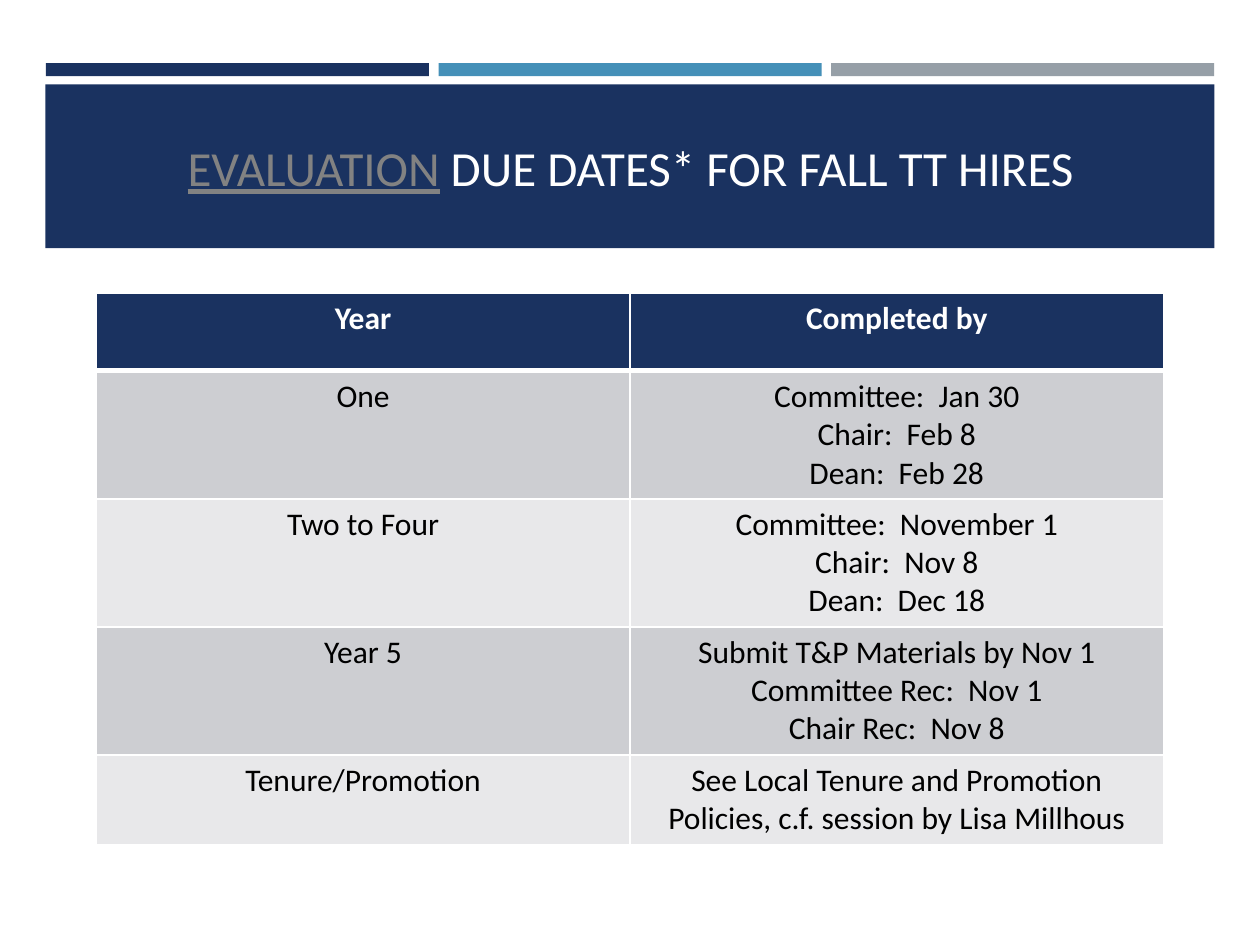
from lxml import etree
from pptx import Presentation
from pptx.dml.color import RGBColor
from pptx.enum.shapes import MSO_SHAPE
from pptx.enum.text import MSO_ANCHOR, PP_ALIGN
from pptx.oxml.ns import qn
from pptx.util import Pt

RECT = MSO_SHAPE.RECTANGLE
CENTER = PP_ALIGN.CENTER
MIDDLE = MSO_ANCHOR.MIDDLE

NAVY = RGBColor(0x1A, 0x32, 0x60)
BLUE = RGBColor(0x45, 0x90, 0xB8)
GRAY = RGBColor(0x96, 0x9F, 0xA7)
LINK_GRAY = RGBColor(0x82, 0x82, 0x82)
DARK_ROW = RGBColor(0xCD, 0xCE, 0xD2)
LIGHT_ROW = RGBColor(0xE8, 0xE8, 0xEA)
WHITE = RGBColor(0xFF, 0xFF, 0xFF)
BLACK = RGBColor(0, 0, 0)

ROWS = [
    ("Year", ["Completed by"]),
    ("One", ["Committee:  Jan 30", "Chair:  Feb 8", "Dean:  Feb 28"]),
    ("Two to Four", ["Committee:  November 1", "Chair:  Nov 8", "Dean:  Dec 18"]),
    ("Year 5", ["Submit T&P Materials by Nov 1", "Committee Rec:  Nov 1",
                "Chair Rec:  Nov 8"]),
    ("Tenure/Promotion", ["See Local Tenure and Promotion Policies, "
                          "c.f. session by Lisa Millhous"]),
]


def add_text(p, text, size=18, color=BLACK, bold=False, underline=False):
    p.alignment = CENTER
    r = p.add_run()
    r.text = text
    r.font.name = "Calibri"
    r.font.size = Pt(size)
    r.font.color.rgb = color
    r.font.bold = bold
    r.font.underline = underline


def set_borders(cell, **widths):
    """Draw white cell borders; widths maps the sides L, R, T, B to points."""
    tc_pr = cell._tc.get_or_add_tcPr()
    for side, width in widths.items():
        ln = etree.SubElement(tc_pr, qn(f"a:ln{side}"), w=str(Pt(width)))
        fill = etree.SubElement(ln, qn("a:solidFill"))
        etree.SubElement(fill, qn("a:srgbClr"), val=str(WHITE))


prs = Presentation()
prs.slide_width, prs.slide_height = Pt(720), Pt(540)
s = prs.slides.add_slide(prs.slide_layouts[5])

# Three accent bars above the title band
bars = [(26.3 + i * 224.3, 36, 218.9, 7.5, color)
        for i, color in enumerate((NAVY, BLUE, GRAY))]
for left, top, width, height, color in bars + [(26, 48.3, 668, 93.5, NAVY)]:
    sp = s.shapes.add_shape(RECT, Pt(left), Pt(top), Pt(width), Pt(height))
    sp.shadow.inherit = False
    sp.fill.solid()
    sp.fill.fore_color.rgb = color
    sp.line.fill.background()

# Title, brought in front of the band
title = s.shapes.title
title.element.getparent().append(title.element)
title.left, title.top, title.width, title.height = Pt(34.5), Pt(55.4), Pt(651.5), Pt(80)
tf = title.text_frame
tf.word_wrap = True
tf.vertical_anchor = MIDDLE
add_text(tf.paragraphs[0], "EVALUATION", size=28, color=LINK_GRAY, underline=True)
add_text(tf.paragraphs[0], " DUE DATES* FOR FALL TT HIRES", size=28, color=WHITE)

# Due dates; rows grow to fit their text
frame = s.shapes.add_table(len(ROWS), 2, Pt(55), Pt(167.3), Pt(610), Pt(311))
table = frame.table
for i, (year, deadlines) in enumerate(ROWS):
    header = i == 0
    table.rows[i].height = Pt(44.6)
    for j, lines in enumerate(([year], deadlines)):
        cell = table.cell(i, j)
        set_borders(cell, L=1, R=1, T=3 if i == 1 else 1, B=3 if header else 1)
        cell.fill.solid()
        cell.fill.fore_color.rgb = NAVY if header else DARK_ROW if i % 2 else LIGHT_ROW
        tf = cell.text_frame
        for k, line in enumerate(lines):
            p = tf.add_paragraph() if k else tf.paragraphs[0]
            add_text(p, line, color=WHITE if header else BLACK, bold=header)
frame.height = Pt(311)

prs.save("out.pptx")
